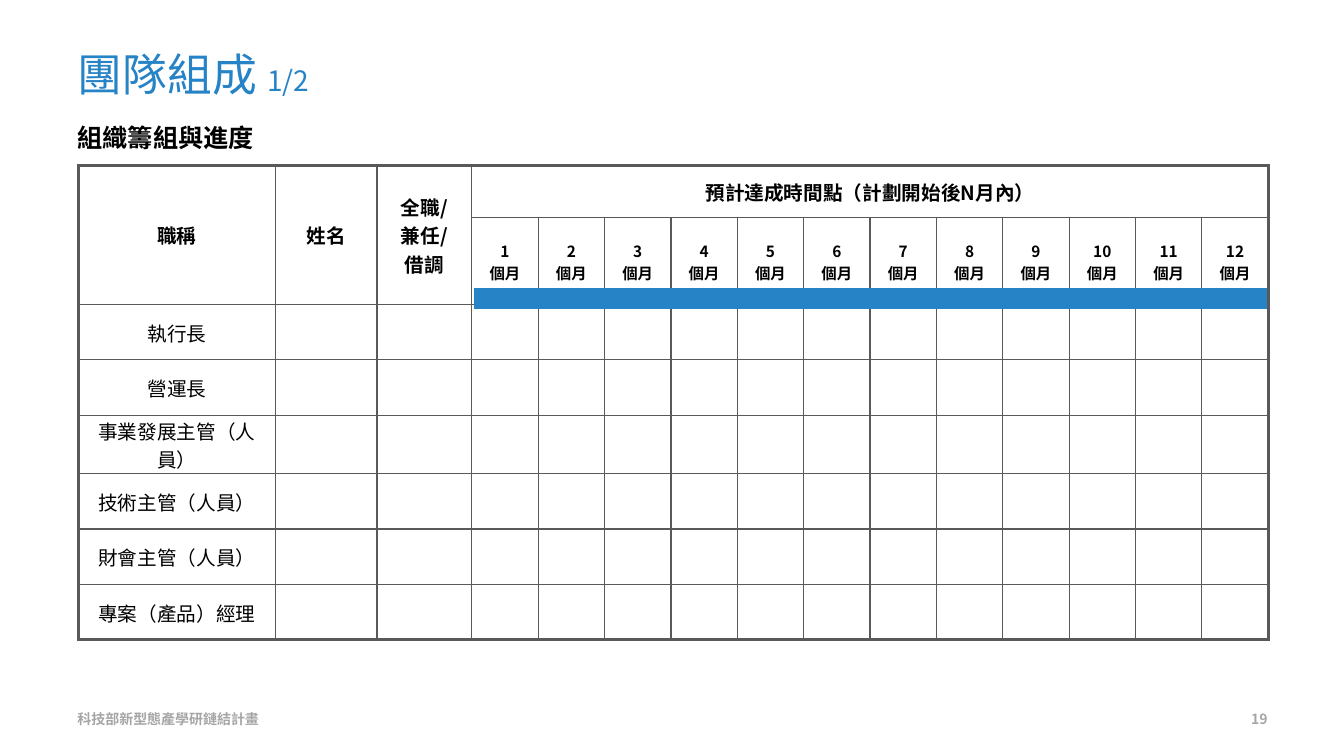
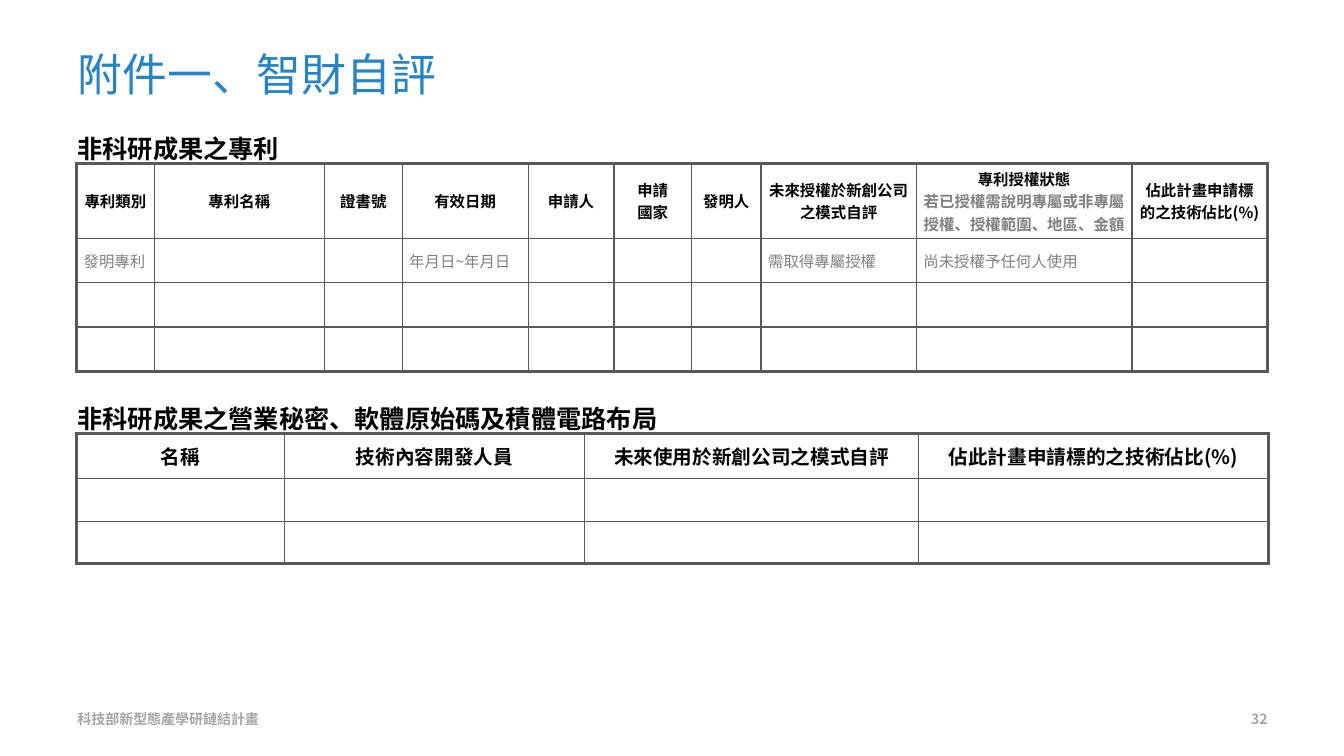
"""Build two grant-plan slides: team organisation and intellectual property self-assessment."""
from dataclasses import dataclass, replace
from typing import NamedTuple

from lxml import etree
from pptx import Presentation
from pptx.dml.color import RGBColor
from pptx.enum.shapes import MSO_CONNECTOR
from pptx.enum.text import MSO_ANCHOR, MSO_AUTO_SIZE, PP_ALIGN
from pptx.oxml.ns import qn
from pptx.util import Inches, Pt

LEFT, CENTER, RIGHT, JUSTIFY = PP_ALIGN.LEFT, PP_ALIGN.CENTER, PP_ALIGN.RIGHT, PP_ALIGN.JUSTIFY
MIDDLE, TOP = MSO_ANCHOR.MIDDLE, MSO_ANCHOR.TOP
FIT_SHAPE, NO_FIT = MSO_AUTO_SIZE.SHAPE_TO_FIT_TEXT, MSO_AUTO_SIZE.NONE
STRAIGHT = MSO_CONNECTOR.STRAIGHT

BLUE, BLACK, GREY, FOOTER_GREY, BORDER = "2683C6", "000000", "808080", "A6A6A6", "595959"
FONT, FONT_TRADITIONAL = "Noto Sans CJK SC", "Noto Sans CJK TC"
FOOTER = "科技部新型態產學研鏈結計畫"
MARGIN = 0.67
OUTER_LINE, INNER_LINE = 2.25, 1
TITLE_ONLY = 5


class Box(NamedTuple):
    """A rectangle in inches."""
    left: float
    top: float
    width: float
    height: float


@dataclass(frozen=True)
class Style:
    """The look of a paragraph."""
    size: float
    color: str = BLACK
    bold: bool = False
    align: PP_ALIGN = CENTER
    font: str = FONT


@dataclass(frozen=True)
class CellText:
    """Lines of a cell, with an optional grey note below."""
    text: str
    style: Style
    note: str = ""


@dataclass(frozen=True)
class Grid:
    """A bordered table; texts are keyed by row and column."""
    left: float
    top: float
    widths: list[float]
    heights: list[float]
    texts: dict[tuple[int, int], CellText]
    margins: tuple[float, float, float, float] = (0.07, 0.04, 0.07, 0.04)
    merges: tuple[tuple[int, int, int, int], ...] = ()


TITLE = Style(32, BLUE, align=LEFT)
HEADING = Style(18, bold=True, align=JUSTIFY)
FOOTER_STYLE = Style(10, FOOTER_GREY, True, LEFT)
HEADER = Style(14, bold=True)
SMALL_HEADER = Style(11, bold=True)
LABEL = Style(14)
EXAMPLE = Style(11, GREY, align=LEFT)


def rgb(color: str) -> RGBColor:
    """Return the colour for a hex string."""
    return RGBColor.from_string(color)


def format_paragraph(paragraph, style: Style) -> None:
    """Apply a style to a paragraph, including its East Asian font."""
    paragraph.alignment = style.align
    font = paragraph.font
    font.size, font.bold, font.name = Pt(style.size), style.bold, style.font
    font.color.rgb = rgb(style.color)
    defaults = paragraph._p.pPr.find(qn("a:defRPr"))
    etree.SubElement(defaults, qn("a:ea"), typeface=style.font)


def add_text(slide, box: Box, text: str, style: Style, anchor=TOP,
             line_spacing: float = 1.0, fit=NO_FIT) -> None:
    """Add a one-paragraph text box."""
    frame = slide.shapes.add_textbox(*map(Inches, box)).text_frame
    frame.word_wrap, frame.auto_size, frame.vertical_anchor = True, fit, anchor
    paragraph = frame.paragraphs[0]
    paragraph.text = text
    paragraph.line_spacing = line_spacing
    format_paragraph(paragraph, style)


def add_heading(slide, top: float, width: float, text: str) -> None:
    """Add a heading that sits directly above a table."""
    add_text(slide, Box(MARGIN, top, width, 0.5), text, HEADING, line_spacing=1.5, fit=FIT_SHAPE)


def add_page(presentation, title: str, number: int, part: str = ""):
    """Add a slide with its title, footer and page number."""
    slide = presentation.slides.add_slide(presentation.slide_layouts[TITLE_ONLY])
    shape = slide.shapes.title
    shape.left, shape.top, shape.width, shape.height = map(Inches, Box(MARGIN, 0.3, 12, 0.86))
    frame = shape.text_frame
    frame.vertical_anchor, frame.auto_size = MIDDLE, NO_FIT
    paragraph = frame.paragraphs[0]
    format_paragraph(paragraph, TITLE)
    paragraph.add_run().text = title
    if part:
        run = paragraph.add_run()
        run.text = part
        run.font.size = Pt(20)
    add_text(slide, Box(MARGIN, 6.93, 3.11, 0.4), FOOTER, FOOTER_STYLE, MIDDLE)
    add_text(slide, Box(9.56, 6.93, 3.11, 0.4), str(number),
             replace(FOOTER_STYLE, align=RIGHT), MIDDLE)
    return slide


def set_borders(cell, outer: dict[str, bool]) -> None:
    """Draw the four cell borders, thicker on the table's outline."""
    properties = cell._tc.get_or_add_tcPr()
    for side, is_outer in outer.items():
        width = Pt(OUTER_LINE if is_outer else INNER_LINE)
        line = etree.SubElement(properties, qn(f"a:ln{side}"), w=str(width))
        fill = etree.SubElement(line, qn("a:solidFill"))
        etree.SubElement(fill, qn("a:srgbClr"), val=BORDER)


def fill_cell(cell, content: CellText) -> None:
    """Write the lines of a cell and its note."""
    lines = [(line, content.style) for line in content.text.split("\n")]
    if content.note:
        lines.append((content.note, replace(content.style, color=GREY)))
    frame = cell.text_frame
    for index, (line, style) in enumerate(lines):
        paragraph = frame.add_paragraph() if index else frame.paragraphs[0]
        paragraph.text = line
        format_paragraph(paragraph, style)


def add_grid(slide, grid: Grid) -> None:
    """Add a table with a thick outline and thin inner lines."""
    rows, columns = len(grid.heights), len(grid.widths)
    box = Box(grid.left, grid.top, sum(grid.widths), sum(grid.heights))
    table = slide.shapes.add_table(rows, columns, *map(Inches, box)).table
    table.first_row = table.horz_banding = False
    for column, width in zip(table.columns, grid.widths):
        column.width = Inches(width)
    for row, height in zip(table.rows, grid.heights):
        row.height = Inches(height)
    for first_row, first_column, last_row, last_column in grid.merges:
        table.cell(first_row, first_column).merge(table.cell(last_row, last_column))
    for row in range(rows):
        for column in range(columns):
            cell = table.cell(row, column)
            across = cell.span_width if cell.is_merge_origin else 1
            down = cell.span_height if cell.is_merge_origin else 1
            set_borders(cell, {"L": column == 0, "R": column + across == columns,
                               "T": row == 0, "B": row + down == rows})
            cell.fill.background()
            cell.vertical_anchor = MIDDLE
            (cell.margin_left, cell.margin_top,
             cell.margin_right, cell.margin_bottom) = map(Inches, grid.margins)
            if (row, column) in grid.texts:
                fill_cell(cell, grid.texts[row, column])


def header_row(labels: list[str], style: Style) -> dict[tuple[int, int], CellText]:
    """Return the texts of a first row."""
    return {(0, column): CellText(label, style) for column, label in enumerate(labels)}


def build_team(presentation) -> None:
    """Build the team schedule slide."""
    slide = add_page(presentation, "團隊組成 ", 19, "1/2")
    add_text(slide, Box(MARGIN, 1.16, 12.02, 0.47), "組織籌組與進度",
             replace(HEADING, align=LEFT, font=FONT_TRADITIONAL))
    months = 12
    fixed_widths = [1.95, 1.01, 0.94]
    month_width = (11.8 - sum(fixed_widths)) / months
    roles = ["執行長", "營運長", "事業發展主管（人員）", "技術主管（人員）",
             "財會主管（人員）", "專案（產品）經理"]
    texts = header_row(["職稱", "姓名", "全職/\n兼任/\n借調",
                        "預計達成時間點（計劃開始後N月內）"], HEADER)
    for month in range(1, months + 1):
        texts[1, month + 2] = CellText(f"{month}\n個月", SMALL_HEADER)
    for row, role in enumerate(roles, start=2):
        texts[row, 0] = CellText(role, LABEL)
    merges = tuple((0, column, 1, column) for column in range(3)) + ((0, 3, 0, months + 2),)
    add_grid(slide, Grid(0.78, 1.64, fixed_widths + [month_width] * months,
                         [0.52] * 2 + [0.55] * len(roles), texts,
                         (0.01, 0.01, 0.01, 0), merges))
    timeline = slide.shapes.add_connector(
        STRAIGHT, Inches(4.7), Inches(2.96), Inches(12.57), Inches(2.96))
    timeline.line.color.rgb = rgb(BLUE)
    timeline.line.width = Pt(15)
    etree.SubElement(timeline._element.spPr, qn("a:effectLst"))


def build_property(presentation) -> None:
    """Build the intellectual property slide."""
    slide = add_page(presentation, "附件一、智財自評", 32)
    patents = header_row(["專利類別", "專利名稱", "證書號", "有效日期", "申請人", "申請\n國家",
                          "發明人", "未來授權於新創公司之模式自評", "專利授權狀態",
                          "佔此計畫申請標的之技術佔比(%)"], SMALL_HEADER)
    patents[0, 8] = replace(patents[0, 8], note="若已授權需說明專屬或非專屬授權、授權範圍、地區、金額")
    examples = {0: "發明專利", 3: "年月日~年月日", 7: "需取得專屬授權", 8: "尚未授權予任何人使用"}
    for column, example in examples.items():
        patents[1, column] = CellText(example, EXAMPLE)
    add_grid(slide, Grid(0.76, 1.62,
                         [0.77, 1.69, 0.77, 1.25, 0.85, 0.77, 0.69, 1.54, 2.14, 1.34],
                         [0.68] + [0.44] * 3, patents))
    add_heading(slide, 1.12, 11.75, "非科研成果之專利")
    add_heading(slide, 3.8, 11.58, "非科研成果之營業秘密、軟體原始碼及積體電路布局")
    secrets = header_row(["名稱", "技術內容開發人員", "未來使用於新創公司之模式自評",
                          "佔此計畫申請標的之技術佔比(%)"], HEADER)
    add_grid(slide, Grid(0.76, 4.3, [2.06, 2.98, 3.31, 3.47], [0.45, 0.42, 0.42], secrets))


def main() -> None:
    """Create and save the presentation."""
    presentation = Presentation()
    presentation.slide_width, presentation.slide_height = Inches(13.33), Inches(7.5)
    build_team(presentation)
    build_property(presentation)
    presentation.save("out.pptx")


if __name__ == "__main__":
    main()
